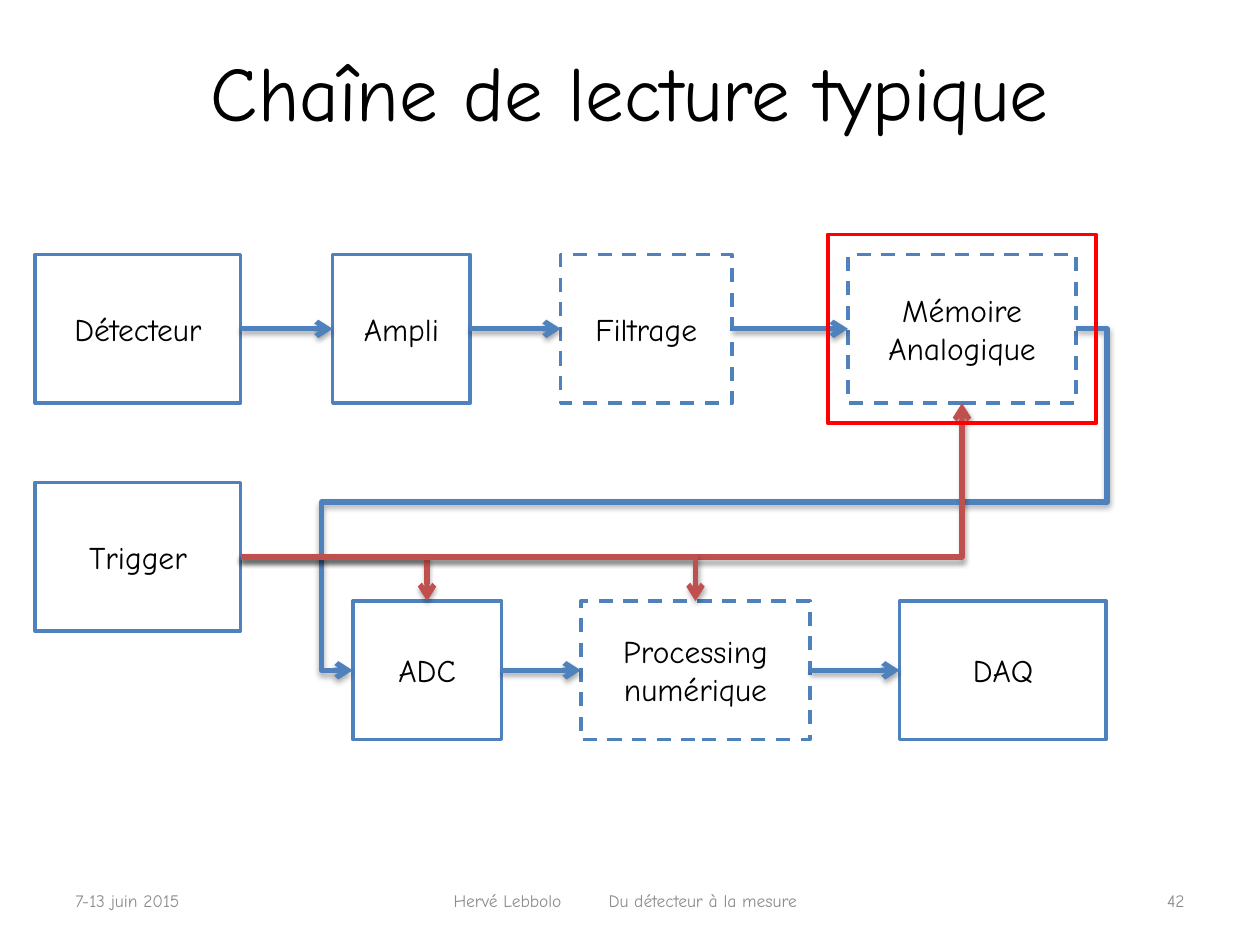
from lxml import etree
from pptx import Presentation
from pptx.dml.color import RGBColor
from pptx.enum.dml import MSO_LINE
from pptx.enum.shapes import MSO_CONNECTOR, MSO_SHAPE
from pptx.enum.text import MSO_ANCHOR, MSO_AUTO_SIZE, PP_ALIGN
from pptx.oxml import parse_xml
from pptx.oxml.ns import nsdecls, qn
from pptx.util import Inches, Pt

RECT = MSO_SHAPE.RECTANGLE
STRAIGHT, ELBOW = MSO_CONNECTOR.STRAIGHT, MSO_CONNECTOR.ELBOW
DASH = MSO_LINE.DASH
TOP, MIDDLE = MSO_ANCHOR.TOP, MSO_ANCHOR.MIDDLE
LEFT, CENTER, RIGHT = PP_ALIGN.LEFT, PP_ALIGN.CENTER, PP_ALIGN.RIGHT
NO_FIT = MSO_AUTO_SIZE.NONE

FONT = "Comic Neue"
COLORS = {"white": "FFFFFF", "black": "000000", "gray": "8C8C8C",
          "blue": "4F81BD", "brick": "C0504D", "red": "FF0000"}
# Connection sites of a rectangle
NORTH, WEST, SOUTH, EAST = range(4)


def color(name):
    return RGBColor.from_string(COLORS[name])


def write(frame, text, size=18, tint="black", align=CENTER, anchor=MIDDLE):
    """Fill a text frame, one paragraph per line of text."""
    frame.word_wrap = True
    frame.auto_size = NO_FIT
    frame.vertical_anchor = anchor
    for i, line in enumerate(text.split("\n")):
        para = frame.add_paragraph() if i else frame.paragraphs[0]
        para.alignment = align
        run = para.add_run()
        run.text = line
        run.font.name = FONT
        run.font.size = Pt(size)
        run.font.color.rgb = color(tint)


class Deck:
    """Style and current slide."""

    def __init__(self):
        self.prs = Presentation()
        self.prs.slide_width = Inches(10)
        self.prs.slide_height = Inches(7.5)
        self.slide = self.prs.slides.add_slide(self.prs.slide_layouts[5])
        self.shapes = self.slide.shapes

    def title(self, text, x, y, w, h):
        box = self.shapes.title
        box.left, box.top, box.width, box.height = map(Inches, (x, y, w, h))
        write(box.text_frame, text, size=44, anchor=TOP)

    def footer(self, text, x, w, align=LEFT, inset=0.1, tab=None):
        box = self.shapes.add_textbox(*map(Inches, (x, 6.95, w, 0.4)))
        frame = box.text_frame
        frame.margin_left = Inches(inset)
        if tab:
            props = frame.paragraphs[0]._p.get_or_add_pPr()
            stops = etree.SubElement(props, qn("a:tabLst"))
            etree.SubElement(stops, qn("a:tab"), pos=str(Inches(tab)), algn="l")
        write(frame, text, size=10, tint="gray", align=align)

    def block(self, text, x, y, w, h, dash=False):
        box = self.frame(x, y, w, h, "blue")
        box.fill.solid()
        box.fill.fore_color.rgb = color("white")
        if dash:
            box.line.dash_style = DASH
        write(box.text_frame, text)
        return box

    def frame(self, x, y, w, h, tint):
        box = self.shapes.add_shape(RECT, *map(Inches, (x, y, w, h)))
        box.shadow.inherit = False
        box.fill.background()
        box.line.color.rgb = color(tint)
        box.line.width = Pt(2)
        return box

    def arrow(self, start, end, tint="blue", out=EAST, into=WEST,
              bend=None, adjust=()):
        kind = ELBOW if bend else STRAIGHT
        link = self.shapes.add_connector(kind, 0, 0, 0, 0)
        link.begin_connect(start, out)
        link.end_connect(end, into)
        link.line.color.rgb = color(tint)
        link.line.width = Pt(3)
        props = link._element.spPr
        if bend:
            geom = props.find(qn("a:prstGeom"))
            geom.set("prst", bend)
            guides = geom.find(qn("a:avLst"))
            for i, value in enumerate(adjust, 1):
                etree.SubElement(guides, qn("a:gd"), name=f"adj{i}",
                                 fmla=f"val {value}")
        etree.SubElement(props.find(qn("a:ln")), qn("a:tailEnd"), type="arrow")
        props.append(parse_xml(
            f'<a:effectLst {nsdecls("a")}><a:outerShdw blurRad="{Pt(3.1)}" '
            f'dist="{Pt(1.8)}" dir="5400000" rotWithShape="0">'
            f'<a:srgbClr val="{COLORS["black"]}"><a:alpha val="35000"/>'
            '</a:srgbClr></a:outerShdw></a:effectLst>'))


def main():
    deck = Deck()
    deck.title("Chaîne de lecture typique", 0.5, 0.3, 9, 1.25)

    # Footer
    deck.footer("7-13 juin 2015", 0.5, 1.51)
    deck.footer("Hervé Lebbolo\tDu détecteur à la mesure", 2.32, 5.28,
                inset=1.28, tab=1.23)
    deck.footer("42", 8.31, 1.19, align=RIGHT)

    # Analog row, digital row and trigger
    high, low = 2.02, 4.77
    tall, short = 1.18, 1.1
    sensor = deck.block("Détecteur", 0.28, high, 1.63, tall)
    amp = deck.block("Ampli", 2.64, high, 1.09, tall)
    filt = deck.block("Filtrage", 4.45, high, 1.36, tall, dash=True)
    store = deck.block("Mémoire\nAnalogique", 6.73, high, 1.81, tall, dash=True)
    adc = deck.block("ADC", 2.8, low, 1.18, short)
    proc = deck.block("Processing numérique", 4.61, low, 1.82, short, dash=True)
    daq = deck.block("DAQ", 7.14, low, 1.64, short)
    trigger = deck.block("Trigger", 0.28, 3.83, 1.63, tall)

    # Signal path
    for row in ((sensor, amp, filt, store), (adc, proc, daq)):
        for start, end in zip(row, row[1:]):
            deck.arrow(start, end)
    deck.arrow(store, adc, bend="bentConnector5", adjust=(-4300, 50700, 104300))

    # Trigger paths
    for end, side in ((store, SOUTH), (adc, NORTH), (proc, NORTH)):
        deck.arrow(trigger, end, tint="brick", into=side, bend="bentConnector2")

    # Highlight around the analog memory
    deck.frame(6.57, 1.86, 2.13, 1.5, "red")

    deck.prs.save("out.pptx")


if __name__ == "__main__":
    main()
